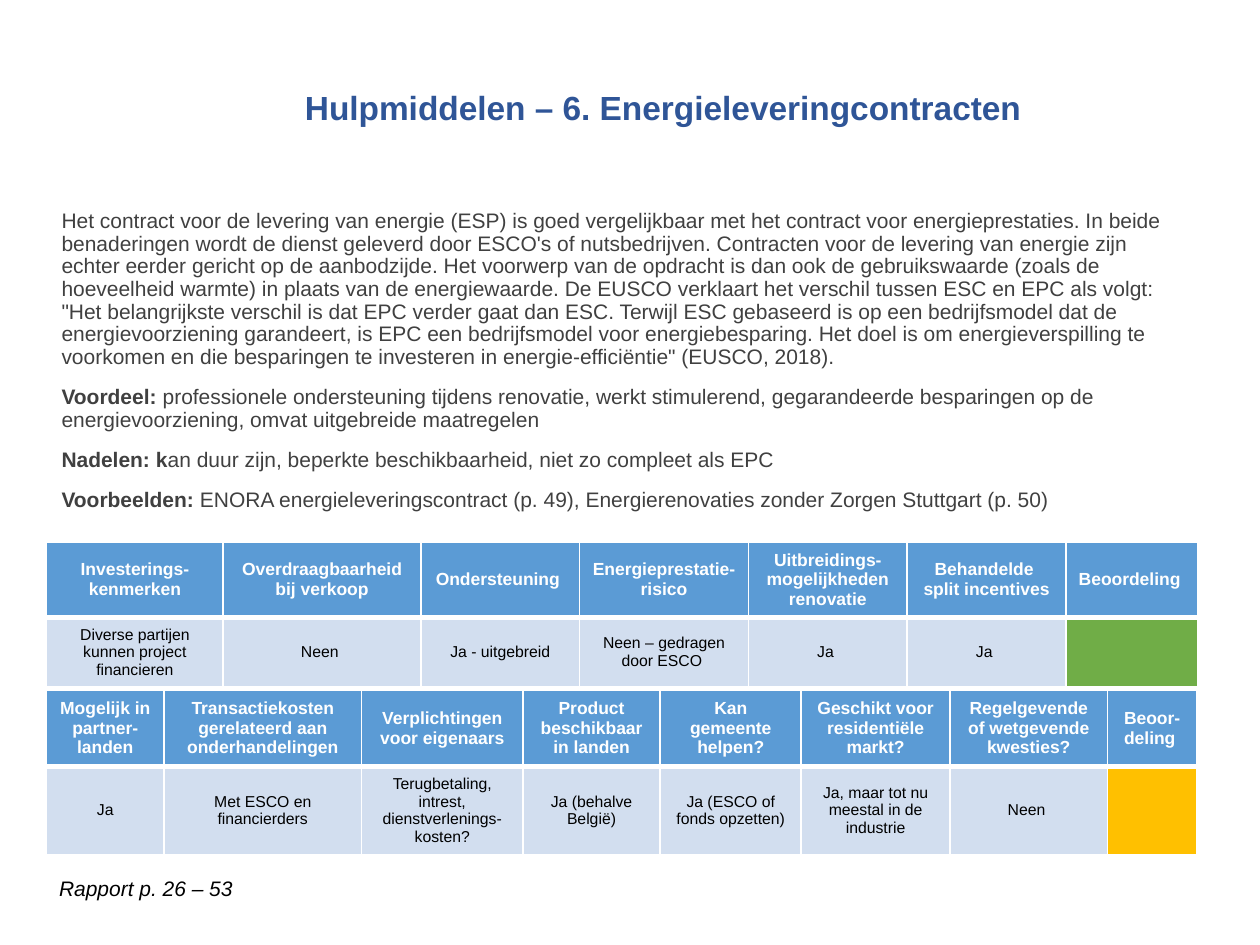
from dataclasses import dataclass

from lxml.etree import SubElement
from pptx import Presentation
from pptx.dml.color import RGBColor
from pptx.enum.text import MSO_ANCHOR, PP_ALIGN
from pptx.oxml.ns import qn
from pptx.util import Inches, Pt


@dataclass(frozen=True)
class Theme:
    font: str = "Arial"
    title: str = "2F5597"
    body: str = "404040"
    black: str = "000000"
    white: str = "FFFFFF"
    header_fill: str = "5B9BD5"
    cell_fill: str = "D2DEEF"
    green: str = "70AD47"
    amber: str = "FFC000"
    title_size: float = 19.1
    body_size: float = 12
    header_size: float = 10
    cell_size: float = 9
    thin_border: float = 1
    thick_border: float = 3


THEME = Theme()

TITLE = "Hulpmiddelen – 6. Energieleveringcontracten"

# Each paragraph is a bold lead and the text after it
PARAGRAPHS = [
    ("", "Het contract voor de levering van energie (ESP) is goed vergelijkbaar met het "
         "contract voor energieprestaties. In beide benaderingen wordt de dienst geleverd "
         "door ESCO's of nutsbedrijven. Contracten voor de levering van energie zijn echter "
         "eerder gericht op de aanbodzijde. Het voorwerp van de opdracht is dan ook de "
         "gebruikswaarde (zoals de hoeveelheid warmte) in plaats van de energiewaarde. De "
         "EUSCO verklaart het verschil tussen ESC en EPC als volgt: \"Het belangrijkste "
         "verschil is dat EPC verder gaat dan ESC. Terwijl ESC gebaseerd is op een "
         "bedrijfsmodel dat de energievoorziening garandeert, is EPC een bedrijfsmodel voor "
         "energiebesparing. Het doel is om energieverspilling te voorkomen en die "
         "besparingen te investeren in energie-efficiëntie\" (EUSCO, 2018)."),
    ("Voordeel:", " professionele ondersteuning tijdens renovatie, werkt stimulerend, "
                  "gegarandeerde besparingen op de energievoorziening, omvat uitgebreide "
                  "maatregelen"),
    ("Nadelen: k", "an duur zijn, beperkte beschikbaarheid, niet zo compleet als EPC"),
    ("Voorbeelden:", " ENORA energieleveringscontract (p. 49), Energierenovaties zonder "
                     "Zorgen Stuttgart (p. 50)"),
]

# Each column is its width, heading and value; the last column holds the rating colour
FINANCE_COLUMNS = [
    (1.4, "Investerings-kenmerken", "Diverse partijen kunnen project financieren"),
    (1.57, "Overdraagbaarheid bij verkoop", "Neen "),
    (1.26, "Ondersteuning ", "Ja - uitgebreid"),
    (1.34, "Energieprestatie-risico", "Neen – gedragen door ESCO "),
    (1.26, "Uitbreidings-mogelijkheden renovatie", "Ja "),
    (1.26, "Behandelde \nsplit incentives", "Ja "),
    (1.05, "Beoordeling ", ""),
]
MARKET_COLUMNS = [
    (0.93, "Mogelijk in partner-landen", "Ja"),
    (1.57, "Transactiekosten gerelateerd aan onderhandelingen", "Met ESCO en financierders"),
    (1.28, "Verplichtingen voor eigenaars",
     "Terugbetaling, intrest, dienstverlenings-kosten?"),
    (1.09, "Product beschikbaar in landen", "Ja (behalve België)"),
    (1.12, "Kan gemeente helpen?", "Ja (ESCO of fonds opzetten)"),
    (1.18, "Geschikt voor residentiële markt?", "Ja, maar tot nu meestal in de industrie"),
    (1.25, "Regelgevende of wetgevende kwesties?", "Neen "),
    (0.71, "Beoor-deling ", ""),
]


def add_span(para, text, size, color, bold=False, italic=False):
    span = para.add_run()
    span.text = text
    font = span.font
    font.name, font.size, font.bold, font.italic = THEME.font, Pt(size), bold, italic
    font.color.rgb = RGBColor.from_string(color)


def add_text_box(page, left, top, width, height):
    box = page.shapes.add_textbox(Inches(left), Inches(top), Inches(width), Inches(height))
    box.text_frame.word_wrap = True
    return box.text_frame


def place_title(page, left, top, width, height):
    title = page.shapes.title
    title.left, title.top = Inches(left), Inches(top)
    title.width, title.height = Inches(width), Inches(height)
    title.text_frame.vertical_anchor = MSO_ANCHOR.MIDDLE
    para = title.text_frame.paragraphs[0]
    para.alignment = PP_ALIGN.LEFT
    para.line_spacing = 0.8
    add_span(para, TITLE, THEME.title_size, THEME.title, bold=True)


def place_body(page, left, top, width, height):
    frame = add_text_box(page, left, top, width, height)
    for index, (lead, text) in enumerate(PARAGRAPHS):
        para = frame.add_paragraph() if index else frame.paragraphs[0]
        para.line_spacing = 0.9
        para.space_before = Pt(10 if index else 0)
        if lead:
            add_span(para, lead, THEME.body_size, THEME.body, bold=True)
        add_span(para, text, THEME.body_size, THEME.body)


def place_source(page, left, top, width, height):
    frame = add_text_box(page, left, top, width, height)
    add_span(frame.paragraphs[0], "Rapport p. 26 – 53", THEME.body_size, THEME.black,
             italic=True)


def set_borders(cell, top, bottom):
    properties = cell._tc.get_or_add_tcPr()
    widths = {"lnL": THEME.thin_border, "lnR": THEME.thin_border, "lnT": top, "lnB": bottom}
    for side, width in widths.items():
        line = SubElement(properties, qn(f"a:{side}"), w=str(Pt(width)))
        fill = SubElement(line, qn("a:solidFill"))
        SubElement(fill, qn("a:srgbClr"), val=THEME.white)


def fill_cell(cell, text, fill, size, color, bold, top, bottom):
    set_borders(cell, top, bottom)
    cell.fill.solid()
    cell.fill.fore_color.rgb = RGBColor.from_string(fill)
    cell.vertical_anchor = MSO_ANCHOR.MIDDLE
    frame = cell.text_frame
    for index, line in enumerate(text.split("\n")):
        para = frame.add_paragraph() if index else frame.paragraphs[0]
        para.alignment = PP_ALIGN.CENTER
        para.font.size = Pt(size)
        if line:
            add_span(para, line, size, color, bold)


def place_rating_table(page, left, top, row_heights, columns, rating):
    width = sum(column[0] for column in columns)
    table = page.shapes.add_table(2, len(columns), Inches(left), Inches(top),
                                  Inches(width), Inches(sum(row_heights))).table
    for row, height in zip(table.rows, row_heights):
        row.height = Inches(height)
    for index, (column_width, heading, value) in enumerate(columns):
        table.columns[index].width = Inches(column_width)
        fill_cell(table.cell(0, index), heading, THEME.header_fill, THEME.header_size,
                  THEME.white, True, THEME.thin_border, THEME.thick_border)
        fill_cell(table.cell(1, index), value, THEME.cell_fill if value else rating,
                  THEME.cell_size, THEME.black, False, THEME.thick_border,
                  THEME.thin_border)


def main():
    deck = Presentation()
    deck.slide_width, deck.slide_height = Inches(10), Inches(7.5)
    page = deck.slides.add_slide(deck.slide_layouts[5])

    # Heading and explanation
    place_title(page, 2.32, 0.6, 6.28, 0.56)
    place_body(page, 0.39, 1.62, 9.04, 2.6)

    # Rating tables and report reference
    place_rating_table(page, 0.37, 4.3, (0.6, 0.55), FINANCE_COLUMNS, THEME.green)
    place_rating_table(page, 0.37, 5.48, (0.6, 0.7), MARKET_COLUMNS, THEME.amber)
    place_source(page, 0.37, 6.9, 2.32, 0.3)

    deck.save("out.pptx")


if __name__ == "__main__":
    main()
